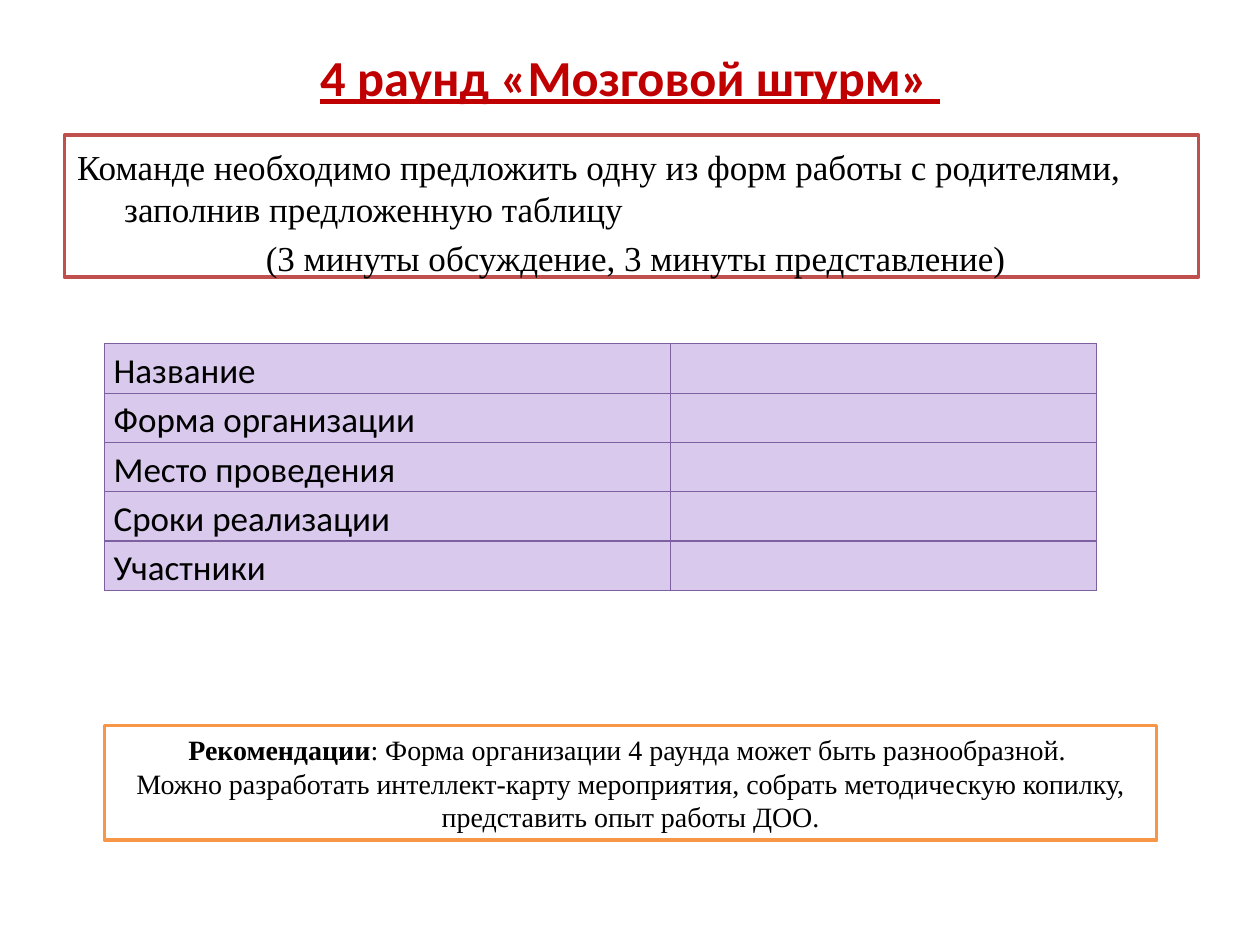
from lxml import etree
from pptx import Presentation
from pptx.dml.color import RGBColor
from pptx.enum.shapes import MSO_SHAPE
from pptx.enum.text import MSO_ANCHOR, MSO_AUTO_SIZE, PP_ALIGN
from pptx.oxml.ns import qn
from pptx.util import Cm, Pt

LEFT, CENTER = PP_ALIGN.LEFT, PP_ALIGN.CENTER
TOP, MIDDLE = MSO_ANCHOR.TOP, MSO_ANCHOR.MIDDLE
NO_FIT = MSO_AUTO_SIZE.NONE
RECTANGLE = MSO_SHAPE.RECTANGLE
SANS, SERIF = "Calibri", "Times New Roman"

TITLE = "4 раунд «Мозговой штурм» "
TASK = [
    ("Команде необходимо предложить одну из форм работы с родителями, "
     "заполнив предложенную таблицу", LEFT, 0),
    (" (3 минуты обсуждение, 3 минуты представление)", CENTER, 4),
]
ROWS = ["Название", "Форма организации", "Место проведения",
        "Сроки реализации", "Участники"]
ADVICE = [
    [("Рекомендации", True),
     (": Форма организации 4 раунда может быть разнообразной. ", False)],
    [("Можно разработать интеллект-карту мероприятия, собрать методическую "
      "копилку, представить опыт работы ДОО.", False)],
]
COL_WIDTHS = [11.4, 8.6]
ROW_HEIGHT = 0.99
CELL_FILL, CELL_LINE = "D9CAED", "7D60A0"


def rgb(value):
    return RGBColor.from_string(value)


def add_run(p, text, size, font=SERIF, color="000000", bold=False, underline=False):
    r = p.add_run()
    r.text = text
    f = r.font
    f.name, f.size, f.bold, f.underline = font, Pt(size), bold, underline
    f.color.rgb = rgb(color)


def place(sp, left, top, width, height):
    sp.left, sp.top, sp.width, sp.height = map(Cm, (left, top, width, height))


def frame(sp, color):
    sp.fill.solid()
    sp.fill.fore_color.rgb = rgb("FFFFFF")
    sp.line.color.rgb = rgb(color)
    sp.line.width = Pt(2)


def prepare(sp, anchor):
    tf = sp.text_frame
    tf.word_wrap = True
    tf.auto_size = NO_FIT
    tf.vertical_anchor = anchor
    return tf


def paragraph(tf, index):
    return tf.add_paragraph() if index else tf.paragraphs[0]


def hang(p, indent):
    pPr = p._p.get_or_add_pPr()
    pPr.set("marL", str(Cm(indent)))
    pPr.set("indent", str(-Cm(indent)))
    etree.SubElement(pPr, qn("a:buNone"))


def style_cell(cell):
    cell.margin_left = cell.margin_right = Cm(0.18)
    cell.margin_top = cell.margin_bottom = 0
    tcPr = cell._tc.get_or_add_tcPr()
    for side in ("a:lnL", "a:lnR", "a:lnT", "a:lnB"):
        ln = etree.SubElement(tcPr, qn(side), w=str(Pt(0.75)))
        fill = etree.SubElement(ln, qn("a:solidFill"))
        etree.SubElement(fill, qn("a:srgbClr"), val=CELL_LINE)
    cell.fill.solid()
    cell.fill.fore_color.rgb = rgb(CELL_FILL)


prs = Presentation()
prs.slide_width, prs.slide_height = Cm(25.4), Cm(19.05)
s = prs.slides.add_slide(prs.slide_layouts[1])

title, body = s.shapes.title, s.placeholders[1]
place(title, 1.27, 0.76, 22.86, 1.55)
p = prepare(title, MIDDLE).paragraphs[0]
p.alignment = CENTER
add_run(p, TITLE, 28.8, SANS, "C00000", bold=True, underline=True)

place(body, 1.3, 2.72, 22.86, 2.87)
frame(body, "C0504D")
tf = prepare(body, TOP)
tf.margin_top = Cm(0.21)
for i, (text, align, before) in enumerate(TASK):
    p = paragraph(tf, i)
    hang(p, 0.95)
    p.alignment = align
    p.space_before = Pt(before)
    add_run(p, text, 20)

table = s.shapes.add_table(len(ROWS), len(COL_WIDTHS), Cm(2.11), Cm(6.93),
                           Cm(sum(COL_WIDTHS)), Cm(ROW_HEIGHT * len(ROWS))).table
for col, width in zip(table.columns, COL_WIDTHS):
    col.width = Cm(width)
for row, label in zip(table.rows, ROWS):
    row.height = Cm(ROW_HEIGHT)
    for cell in row.cells:
        style_cell(cell)
    p = row.cells[0].text_frame.paragraphs[0]
    p.line_spacing = 1.15
    add_run(p, label, 20, SANS)

advice = s.shapes.add_shape(RECTANGLE, 0, 0, 0, 0)
place(advice, 2.11, 14.63, 21.21, 2.31)
advice.shadow.inherit = False
frame(advice, "F79646")
tf = prepare(advice, MIDDLE)
for i, runs in enumerate(ADVICE):
    p = paragraph(tf, i)
    p.alignment = CENTER
    for text, bold in runs:
        add_run(p, text, 16, bold=bold)

prs.save("out.pptx")
